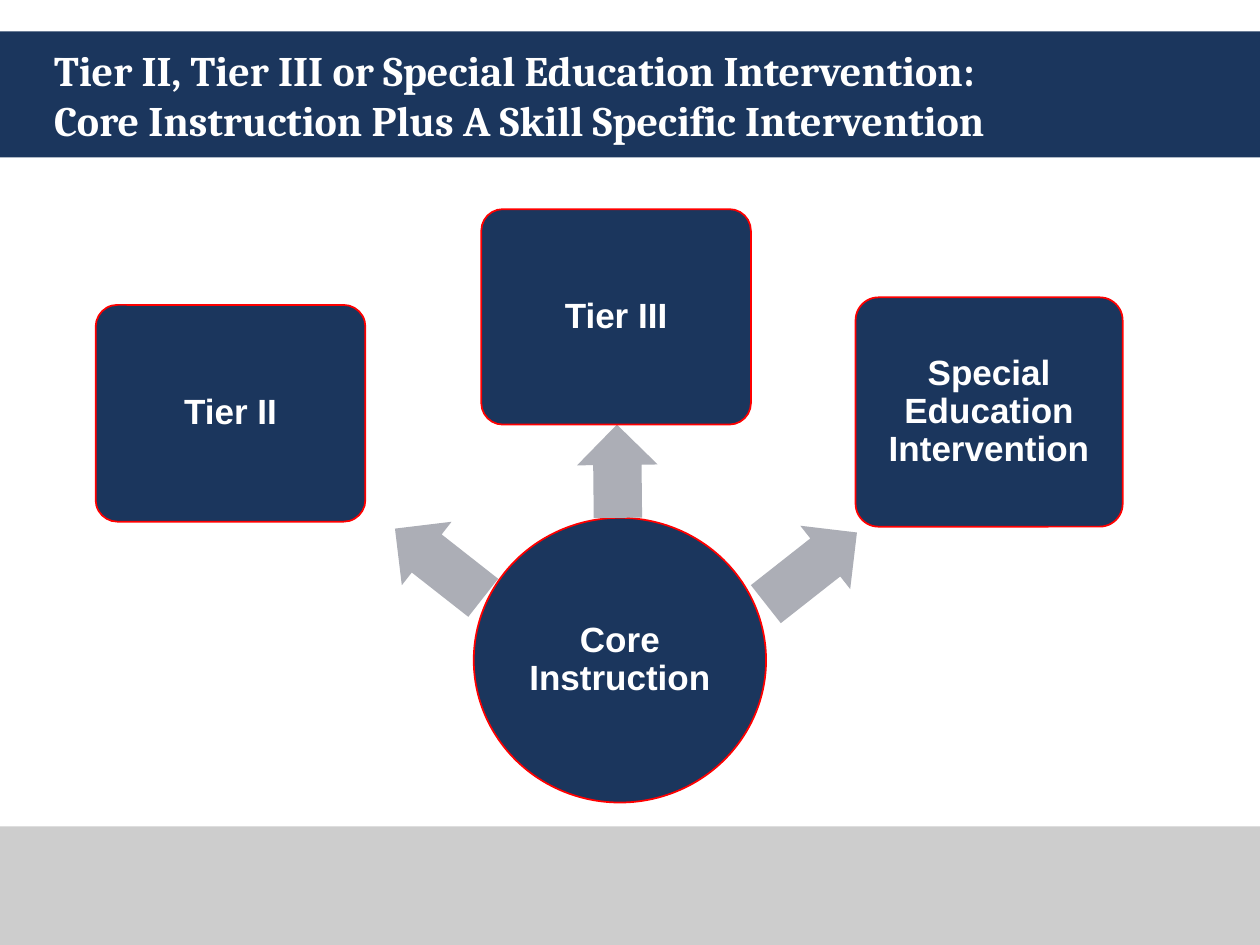
from pptx import Presentation
from pptx.dml.color import RGBColor
from pptx.enum.shapes import MSO_SHAPE
from pptx.enum.text import MSO_ANCHOR, PP_ALIGN
from pptx.util import Inches, Pt

NAVY = RGBColor(0x1B, 0x36, 0x5D)
RED = RGBColor(0xFF, 0x00, 0x00)
ARROW_GRAY = RGBColor(0xAC, 0xAE, 0xB6)
FOOTER_GRAY = RGBColor(0xCD, 0xCD, 0xCD)
WHITE = RGBColor(0xFF, 0xFF, 0xFF)

TIERS = [
    ("Tier II", (0.76, 2.42, 2.14, 1.72)),
    ("Tier III", (3.82, 1.66, 2.14, 1.71)),
    ("Special Education Intervention", (6.79, 2.36, 2.12, 1.82)),
]
ARROWS = [
    ((3.04, 4.15, 0.89, 0.64), 38.1),
    ((4.53, 3.42, 0.74, 0.64), 89.4),
    ((5.98, 4.19, 0.92, 0.64), 141.8),
]


def add_block(s, kind, box, fill):
    """Add a flat preset shape without an outline."""
    sp = s.shapes.add_shape(kind, *map(Inches, box))
    sp.shadow.inherit = False
    sp.fill.solid()
    sp.fill.fore_color.rgb = fill
    sp.line.fill.background()
    return sp


def add_run(p, text, font, size):
    """Add one bold white run."""
    r = p.add_run()
    r.text = text
    r.font.name = font
    r.font.size = Pt(size)
    r.font.bold = True
    r.font.color.rgb = WHITE


def add_node(s, kind, box, text, inset):
    """Add a navy, red-outlined shape with a centred label."""
    sp = add_block(s, kind, box, NAVY)
    sp.line.color.rgb = RED
    sp.line.width = Pt(1)
    tf = sp.text_frame
    tf.word_wrap = True
    tf.vertical_anchor = MSO_ANCHOR.MIDDLE
    tf.margin_left = tf.margin_right = Inches(inset)
    tf.margin_top = tf.margin_bottom = Inches(inset)
    p = tf.paragraphs[0]
    p.alignment = PP_ALIGN.CENTER
    p.line_spacing = 0.9
    add_run(p, text, "Arial", 20)
    return sp


def add_arrow(s, box, angle):
    """Add a gray arrow turned by the given angle."""
    arrow = add_block(s, MSO_SHAPE.LEFT_ARROW, box, ARROW_GRAY)
    arrow.adjustments[0] = 0.6
    arrow.adjustments[1] = 0.5
    arrow.rotation = angle


def set_title(s, lines):
    """Place and fill the title, one line break between lines."""
    title = s.shapes.title
    title.left, title.top = Inches(0.33), Inches(0.25)
    title.width, title.height = Inches(9.08), Inches(1)
    # Bring the title in front of the band
    s.shapes._spTree.append(title._element)
    tf = title.text_frame
    tf.word_wrap = True
    tf.vertical_anchor = MSO_ANCHOR.MIDDLE
    p = tf.paragraphs[0]
    p.alignment = PP_ALIGN.LEFT
    for i, line in enumerate(lines):
        if i:
            p.add_line_break()
        add_run(p, line, "Cambria", 24)


def main():
    """Build the slide and save it."""
    prs = Presentation()
    prs.slide_width, prs.slide_height = Inches(10), Inches(7.5)
    s = prs.slides.add_slide(prs.slide_layouts[5])
    add_block(s, MSO_SHAPE.RECTANGLE, (0, 0.25, 10, 1), NAVY)
    add_block(s, MSO_SHAPE.RECTANGLE, (0, 6.56, 10, 0.94), FOOTER_GRAY)
    add_node(s, MSO_SHAPE.OVAL, (3.76, 4.11, 2.32, 2.26), "Core Instruction", 0.01)
    for (label, box), (arrow_box, angle) in zip(TIERS, ARROWS):
        add_arrow(s, arrow_box, angle)
        card = add_node(s, MSO_SHAPE.ROUNDED_RECTANGLE, box, label, 0.04)
        card.adjustments[0] = 0.1
    set_title(s, ["Tier II, Tier III or Special Education Intervention: ",
                  "Core Instruction Plus A Skill Specific Intervention"])
    prs.save("out.pptx")


main()
